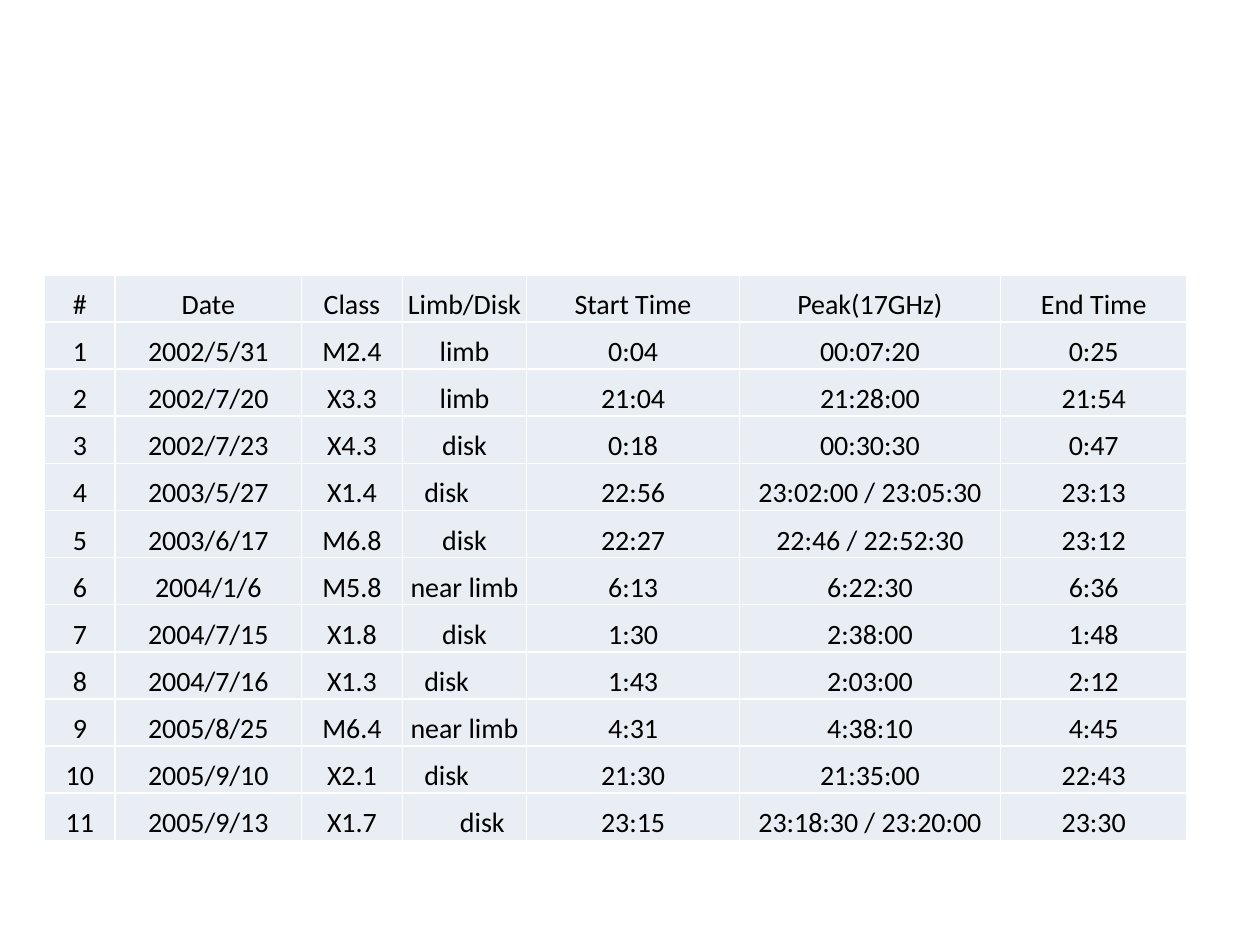
"""Build a slide with a table of solar flare events."""
import pptx
import pptx.dml.color
import pptx.enum.text
import pptx.oxml
import pptx.oxml.ns
import pptx.util

Cm = pptx.util.Cm


def color(hex_string):
    return pptx.dml.color.RGBColor.from_string(hex_string)


def add_borders(cell, hex_string, width):
    properties = cell._tc.get_or_add_tcPr()
    for position, side in enumerate(("lnL", "lnR", "lnT", "lnB")):
        border = pptx.oxml.parse_xml(
            f'<a:{side} {pptx.oxml.ns.nsdecls("a")} w="{int(width)}">'
            f'<a:solidFill><a:srgbClr val="{hex_string}"/></a:solidFill></a:{side}>'
        )
        properties.insert(position, border)


events = [
    ("#", "Date", "Class", "Limb/Disk", "Start Time", "Peak(17GHz)", "End Time"),
    ("1", "2002/5/31", "M2.4", "limb", "0:04", "00:07:20", "0:25"),
    ("2", "2002/7/20", "X3.3", "limb", "21:04", "21:28:00", "21:54"),
    ("3", "2002/7/23", "X4.3", "disk", "0:18", "00:30:30", "0:47"),
    ("4", "2003/5/27", "X1.4", "disk", "22:56", "23:02:00 / 23:05:30", "23:13"),
    ("5", "2003/6/17", "M6.8", "disk", "22:27", "22:46 / 22:52:30", "23:12"),
    ("6", "2004/1/6", "M5.8", "near limb", "6:13", "6:22:30", "6:36"),
    ("7", "2004/7/15", "X1.8", "disk", "1:30", "2:38:00", "1:48"),
    ("8", "2004/7/16", "X1.3", "disk", "1:43", "2:03:00", "2:12"),
    ("9", "2005/8/25", "M6.4", "near limb", "4:31", "4:38:10", "4:45"),
    ("10", "2005/9/10", "X2.1", "disk", "21:30", "21:35:00", "22:43"),
    ("11", "2005/9/13", "X1.7", "disk", "23:15", "23:18:30 / 23:20:00", "23:30"),
]
column_widths = [1.42, 3.76, 2.03, 2.51, 4.29, 5.26, 3.76]
row_height = 0.95
location_column = 3
offset_margins = {4: "margin_right", 8: "margin_right", 10: "margin_right", 11: "margin_left"}

cell_format = {
    "vertical_anchor": pptx.enum.text.MSO_ANCHOR.BOTTOM,
    "margin_left": Cm(0.03),
    "margin_top": Cm(0.03),
    "margin_right": Cm(0.03),
    "margin_bottom": Cm(0),
}
font_format = {"name": "Calibri", "size": pptx.util.Pt(16), "bold": False}

presentation = pptx.Presentation()
presentation.slide_width = Cm(25.4)
presentation.slide_height = Cm(19.05)
slide = presentation.slides.add_slide(presentation.slide_layouts[6])

flares = slide.shapes.add_table(
    len(events), len(column_widths),
    Cm(0.9), Cm(5.54), Cm(sum(column_widths)), Cm(row_height * len(events)),
).table
for option in ("first_row", "horz_banding"):
    setattr(flares, option, False)
for column, width in zip(flares.columns, column_widths):
    column.width = Cm(width)

for row_index, event in enumerate(events):
    flares.rows[row_index].height = Cm(row_height)
    for column_index, entry in enumerate(event):
        cell = flares.cell(row_index, column_index)
        for attribute, value in cell_format.items():
            setattr(cell, attribute, value)
        if column_index == location_column and row_index in offset_margins:
            setattr(cell, offset_margins[row_index], Cm(0.75))
        cell.fill.solid()
        cell.fill.fore_color.rgb = color("E9EDF4")
        add_borders(cell, "FFFFFF", pptx.util.Pt(1))
        paragraph = cell.text_frame.paragraphs[0]
        paragraph.alignment = pptx.enum.text.PP_ALIGN.CENTER
        run = paragraph.add_run()
        run.text = entry
        for attribute, value in font_format.items():
            setattr(run.font, attribute, value)
        run.font.color.rgb = color("000000")

presentation.save("out.pptx")
